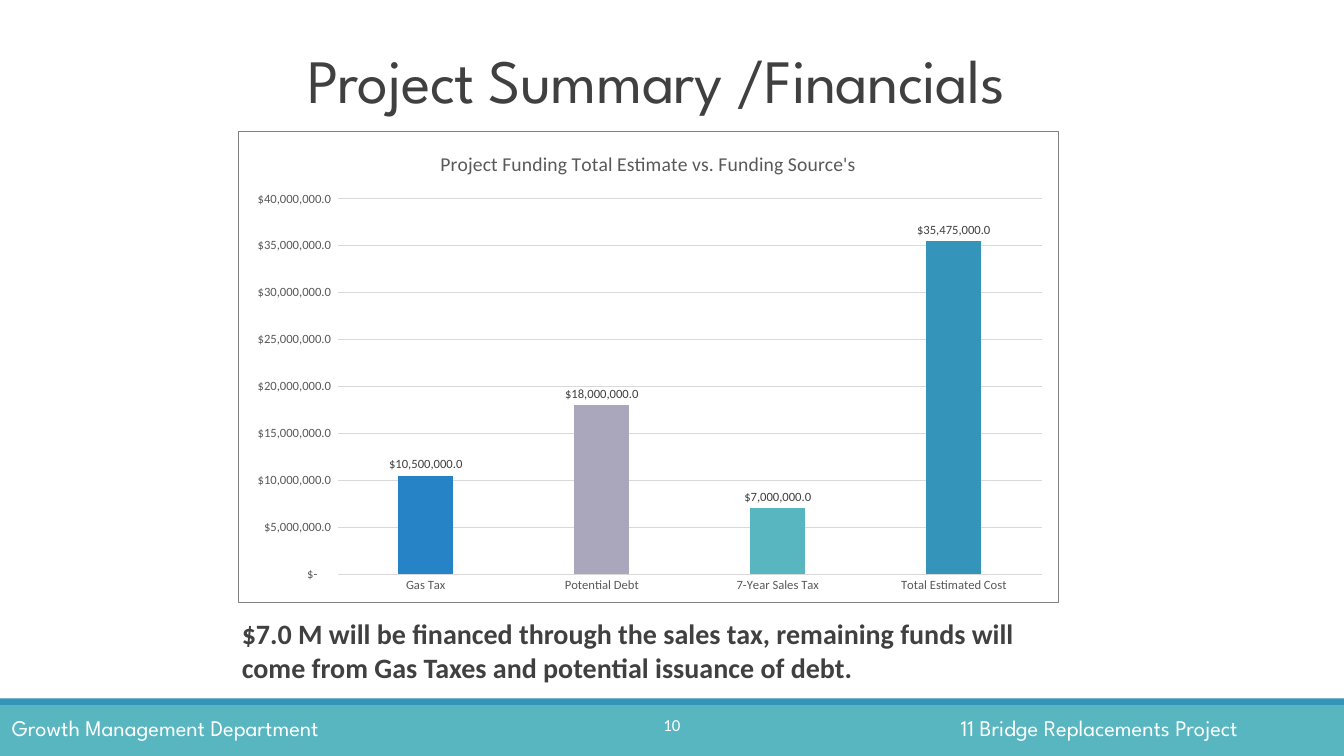
from lxml import etree
from pptx import Presentation
from pptx.chart.data import CategoryChartData
from pptx.dml.color import RGBColor
from pptx.enum.chart import XL_CHART_TYPE as CT, XL_LABEL_POSITION as LP, XL_TICK_MARK as TM
from pptx.enum.shapes import MSO_SHAPE
from pptx.enum.text import MSO_ANCHOR, PP_ALIGN
from pptx.util import Pt

PX = 9144  # EMU per px, 100 px to the inch
COLORS = {
    "teal": "58B6C0", "blue": "3494BA", "azure": "2683C6", "lilac": "AAA7BC",
    "dark": "404040", "axis": "595959", "grid": "D9D9D9", "border": "808080",
    "white": "FFFFFF",
}
HEAD, BODY = "League Spartan", "Calibri"
MONEY = r'_("$"* #,##0.0_);_("$"* \(#,##0.0\);_("$"* "-"??_);_(@_)'


def rgb(name):
    return RGBColor.from_string(COLORS[name])


def style(font, face, size, color, bold=False):
    font.name, font.size, font.bold = face, Pt(size), bold
    font.color.rgb = rgb(color)


prs = Presentation()
prs.slide_width, prs.slide_height = 1333 * PX, 750 * PX
s = prs.slides.add_slide(prs.slide_layouts[5])

# Footer bands
for top, height, color in [(700, 50, "teal"), (693, 7, "blue")]:
    band = s.shapes.add_shape(MSO_SHAPE.RECTANGLE, 0, top * PX, 1333 * PX, height * PX)
    band.shadow.inherit = False
    band.fill.solid()
    band.fill.fore_color.rgb = rgb(color)
    band.line.fill.background()

# Title
title = s.shapes.title
title.left, title.top, title.width, title.height = [v * PX for v in (101, 19, 1100, 130)]
tf = title.text_frame
tf.text = "Project Summary /Financials"
tf.vertical_anchor = MSO_ANCHOR.MIDDLE
p = tf.paragraphs[0]
p.alignment = PP_ALIGN.CENTER
p.line_spacing = 0.85
r = p.runs[0]
style(r.font, HEAD, 44, "dark")
r.font._element.set("spc", "-50")

# Funding note, footer texts and page number
NOTE = ("$7.0 M will be financed through the sales tax, remaining funds will\n"
        "come from Gas Taxes and potential issuance of debt.")
texts = [
    (NOTE, (230, 607, 893, 77), BODY, 20, "dark", True, PP_ALIGN.LEFT),
    ("Growth Management Department", (2, 704, 398, 37), HEAD, 16, "white", False, PP_ALIGN.LEFT),
    ("10", (595, 704, 143, 40), BODY, 12, "white", False, PP_ALIGN.CENTER),
    ("11 Bridge Replacements Project", (943, 704, 367, 37), HEAD, 16, "white", False, PP_ALIGN.LEFT),
]
for text, box, face, size, color, bold, align in texts:
    tf = s.shapes.add_textbox(*[v * PX for v in box]).text_frame
    tf.word_wrap = True
    tf.text = text
    for p in tf.paragraphs:
        p.alignment = align
        style(p.runs[0].font, face, size, color, bold)

# Funding chart
data = CategoryChartData(number_format=MONEY)
data.categories = ["Gas Tax", "Potential Debt", "7-Year Sales Tax", "Total Estimated Cost"]
data.add_series("Series 1", (10500000, 18000000, 7000000, 35475000))
chart_box = [v * PX for v in (236, 130, 814, 468)]
chart = s.shapes.add_chart(CT.COLUMN_CLUSTERED, *chart_box, data).chart
chart.font.name, chart.font.size = BODY, Pt(10)
chart.has_legend = False
chart.has_title = True
tf = chart.chart_title.text_frame
tf.text = "Project Funding Total Estimate vs. Funding Source's"
style(tf.paragraphs[0].runs[0].font, BODY, 14, "axis")

# Columns and value labels
plot = chart.plots[0]
plot.gap_width, plot.overlap = 219, -27
plot.vary_by_categories = False
series = plot.series[0]
series.format.fill.solid()
series.format.fill.fore_color.rgb = rgb("blue")
for i, color in enumerate(["azure", "lilac", "teal"]):
    fill = series.points[i].format.fill
    fill.solid()
    fill.fore_color.rgb = rgb(color)
labels = series.data_labels
labels.show_value = True
labels.position = LP.OUTSIDE_END
labels.number_format, labels.number_format_is_linked = MONEY, False
style(labels.font, BODY, 9, "dark")

# Axes
cat, val = chart.category_axis, chart.value_axis
for axis in (cat, val):
    axis.major_tick_mark = axis.minor_tick_mark = TM.NONE
    style(axis.tick_labels.font, BODY, 9, "axis")
val.has_major_gridlines = True
for line in (cat.format.line, val.major_gridlines.format.line):
    line.color.rgb = rgb("grid")
    line.width = Pt(0.75)
val.format.line.fill.background()
val.minimum_scale, val.maximum_scale, val.major_unit = 0, 40000000, 5000000
val.tick_labels.number_format = MONEY
val.tick_labels.number_format_is_linked = False

# Chart background and border
C = "http://schemas.openxmlformats.org/drawingml/2006/chart"
A = "http://schemas.openxmlformats.org/drawingml/2006/main"
frame = etree.fromstring(
    f'<c:spPr xmlns:c="{C}" xmlns:a="{A}">'
    f'<a:solidFill><a:srgbClr val="{COLORS["white"]}"/></a:solidFill>'
    f'<a:ln w="{Pt(0.75)}"><a:solidFill><a:srgbClr val="{COLORS["border"]}"/></a:solidFill></a:ln>'
    '</c:spPr>')
chart._chartSpace.find(f"{{{C}}}chart").addnext(frame)

prs.save("out.pptx")
